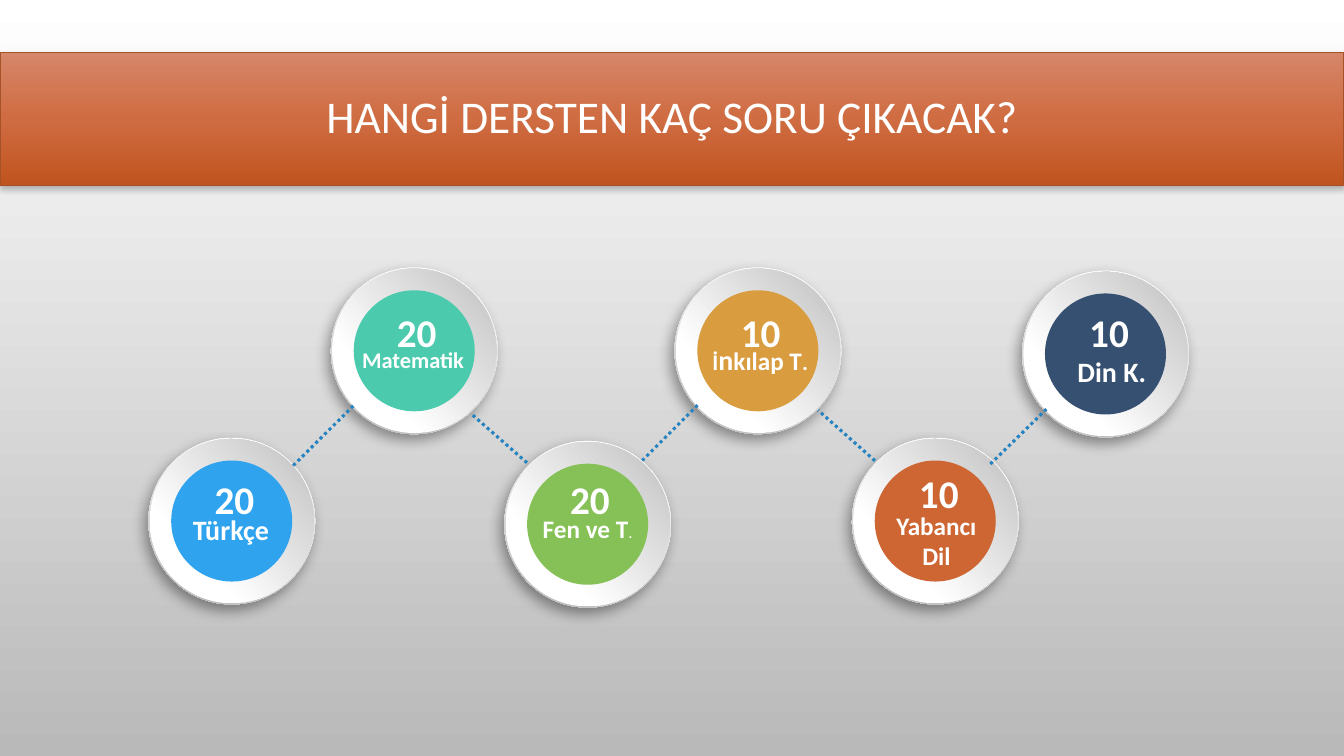
"""Build the slide that shows how many exam questions each school subject has."""
from lxml import etree
from pptx import Presentation, util as u
from pptx.dml.color import RGBColor
from pptx.enum import dml, shapes, text
from pptx.oxml.ns import qn

TITLE = "HANGİ DERSTEN KAÇ SORU ÇIKACAK?"
FONT = "Calibri"
COLORS = {
    "white": "FFFFFF", "black": "000000", "backdrop": "B9B9B9", "rim": "B8B8B8", "ring": "BFBFBF",
    "banner_top": "D68669", "banner_middle": "CF6C42", "banner_bottom": "C0541F",
    "banner_line": "A55229", "link": "2683BF",
    "turkish": "2FA3EE", "maths": "4BCAAD", "science": "86C157",
    "history": "D99C3F", "language": "CE6633", "religion": "355071",
}
# colour, disc centre, count, count corner, label runs, label centre x and top
SUBJECTS = [
    ("turkish", (5.84, 13.13), "20", (5.16, 11.84), [("Türkçe", 20, True)], (5.82, 12.8)),
    ("maths", (10.44, 8.84), "20", (9.75, 7.65), [("Matematik", 16, True)], (10.41, 8.59)),
    ("science", (14.81, 13.21), "20", (14.12, 11.84),
     [("Fen ve T", 18, True), (".", 12, False)], (14.81, 12.8)),
    ("history", (19.1, 8.84), "10", (18.42, 7.65),
     [("İ", 16, True), ("n", 20, True), ("kılap T", 18, True), (".", 16, True)], (19.16, 8.51)),
    ("language", (23.57, 13.13), "10", (22.91, 11.71), [("Yabancı Dil", 18, True)], (23.6, 12.73)),
    ("religion", (27.86, 8.92), "10", (27.2, 7.65), [("Din K.", 20, True)], (28.02, 8.81)),
]
LINKS = [
    ((7.39, 11.73), (8.92, 10.21)),
    ((13.28, 11.66), (11.89, 10.44)),
    ((17.58, 10.21), (16.13, 11.66)),
    ((26.37, 10.31), (24.94, 11.71)),
    ((22.05, 11.61), (20.62, 10.34)),
]
SLIDE_WIDTH, SLIDE_HEIGHT = 33.87, 19.05
RIM, RING, DISC = 4.2, 4.14, 3.05
LABEL_WIDTH = 3.1


def rgb(name):
    return RGBColor.from_string(COLORS[name])


def add_color(parent, name):
    return etree.SubElement(parent, qn("a:srgbClr"), val=COLORS[name])


def set_gradient(fill, element, stops, angle):
    fill.gradient()
    fill.gradient_angle = 360 - angle
    stop_list = next(element.iter(qn("a:gsLst")))
    for stop in list(stop_list):
        stop_list.remove(stop)
    for position, name in stops:
        add_color(etree.SubElement(stop_list, qn("a:gs"), pos=str(position * 1000)), name)


def set_shadow(shape, alpha, blur, distance, angle):
    shape.shadow.inherit = False
    effects = shape._element.spPr.find(qn("a:effectLst"))
    shadow = etree.SubElement(
        effects, qn("a:outerShdw"), blurRad=str(u.Pt(blur)), dist=str(u.Pt(distance)),
        dir=str(angle * 60000), algn="ctr", rotWithShape="0")
    etree.SubElement(add_color(shadow, "black"), qn("a:alpha"), val=str(alpha * 1000))


def add_circle(group, center, diameter):
    left, top = (u.Cm(value - diameter / 2) for value in center)
    circle = group.shapes.add_shape(
        shapes.MSO_SHAPE.OVAL, left, top, u.Cm(diameter), u.Cm(diameter))
    circle.shadow.inherit = False
    circle.line.fill.background()
    return circle


def add_badge(slide, color, center):
    group = slide.shapes.add_group_shape()
    rim = add_circle(group, center, RIM)
    rim.rotation = 62.3
    set_gradient(rim.fill, rim._element, [(17, "white"), (88, "rim")], 45)
    set_shadow(rim, 39, 10, 5, 123)
    ring = add_circle(group, center, RING)
    ring.rotation = 273
    set_gradient(ring.fill, ring._element, [(29, "white"), (98, "ring")], 45)
    disc = add_circle(group, center, DISC)
    disc.fill.solid()
    disc.fill.fore_color.rgb = rgb(color)


def add_link(slide, start, end):
    link = slide.shapes.add_connector(
        shapes.MSO_CONNECTOR.STRAIGHT, *(u.Cm(value) for value in start + end))
    link.line.color.rgb = rgb("link")
    link.line.width = u.Pt(2.25)
    link.line.dash_style = dml.MSO_LINE.ROUND_DOT
    etree.SubElement(link._element.spPr, qn("a:effectLst"))


def add_text(slide, left, top, width, height, runs, wrap):
    box = slide.shapes.add_textbox(u.Cm(left), u.Cm(top), u.Cm(width), u.Cm(height))
    frame = box.text_frame
    frame.word_wrap = wrap
    frame.auto_size = text.MSO_AUTO_SIZE.SHAPE_TO_FIT_TEXT
    paragraph = frame.paragraphs[0]
    if wrap:
        paragraph.alignment = text.PP_ALIGN.CENTER
    paragraph.font.name = FONT
    paragraph.font.color.rgb = rgb("white")
    for wording, size, bold in runs:
        run = paragraph.add_run()
        run.text = wording
        run.font.name = FONT
        run.font.size = u.Pt(size)
        run.font.bold = bold
        run.font.color.rgb = rgb("white")


def add_banner(slide):
    banner = slide.shapes.title
    banner.left, banner.top = u.Cm(0), u.Cm(1.32)
    banner.width, banner.height = u.Cm(SLIDE_WIDTH), u.Cm(3.35)
    stops = [(0, "banner_top"), (50, "banner_middle"), (100, "banner_bottom")]
    set_gradient(banner.fill, banner._element, stops, 90)
    banner.line.color.rgb = rgb("banner_line")
    banner.line.width = u.Pt(0.75)
    set_shadow(banner, 28, 4, 2, 90)
    frame = banner.text_frame
    frame.text = TITLE
    frame.auto_size = text.MSO_AUTO_SIZE.NONE
    frame.vertical_anchor = text.MSO_ANCHOR.MIDDLE
    paragraph = frame.paragraphs[0]
    paragraph.alignment = text.PP_ALIGN.CENTER
    paragraph.line_spacing = 0.9
    paragraph.font.name = FONT
    paragraph.font.size = u.Pt(32.4)
    paragraph.font.color.rgb = rgb("white")


def main():
    presentation = Presentation()
    presentation.slide_width, presentation.slide_height = u.Cm(SLIDE_WIDTH), u.Cm(SLIDE_HEIGHT)
    slide = presentation.slides.add_slide(presentation.slide_layouts[5])
    set_gradient(slide.background.fill, slide._element, [(0, "white"), (100, "backdrop")], 90)
    add_banner(slide)
    for color, center, *_ in SUBJECTS:
        add_badge(slide, color, center)
    for start, end in LINKS:
        add_link(slide, start, end)
    for _, _, count, corner, label, (middle, top) in SUBJECTS:
        add_text(slide, *corner, 1.52, 1.45, [(count, 28, True)], False)
        add_text(slide, middle - LABEL_WIDTH / 2, top, LABEL_WIDTH, 1.1, label, True)
    presentation.save("out.pptx")


if __name__ == "__main__":
    main()
